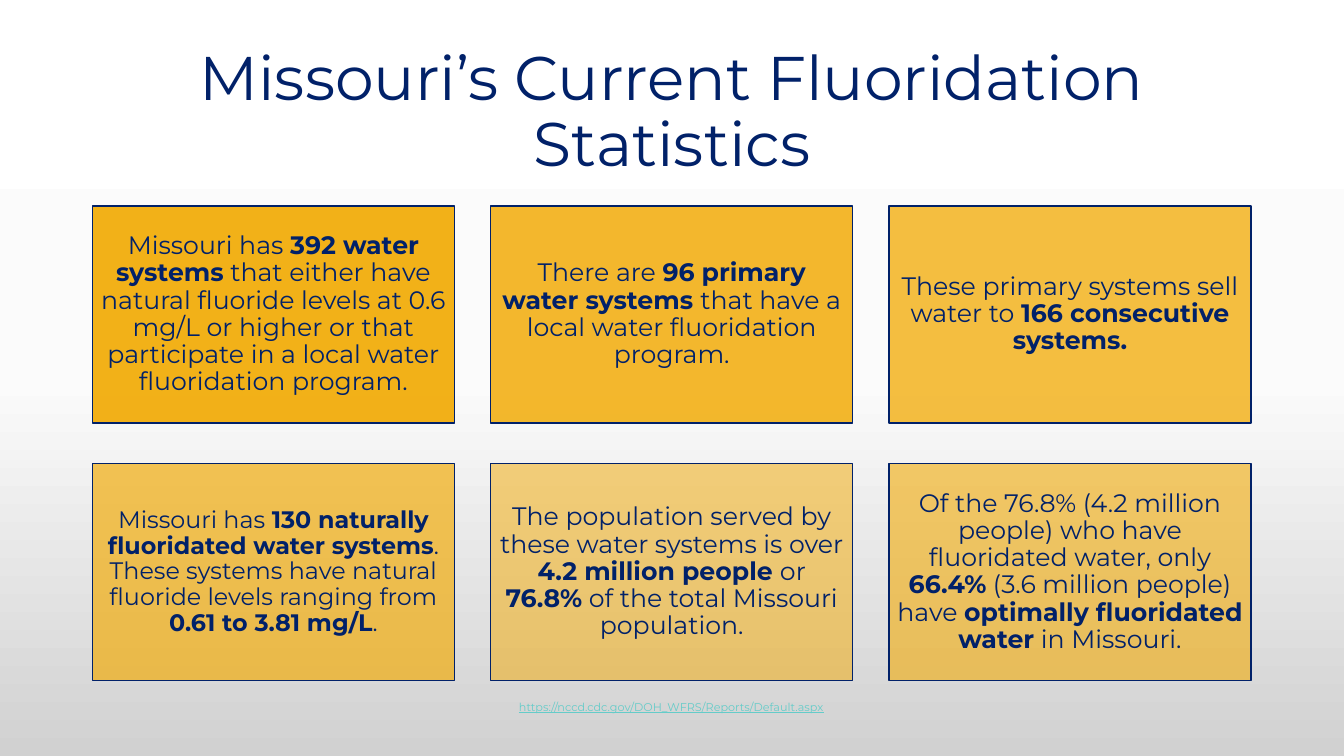
from dataclasses import dataclass

from lxml.etree import SubElement
from pptx import Presentation
from pptx.dml.color import RGBColor as Color
from pptx.enum.shapes import MSO_SHAPE as Preset
from pptx.enum.text import MSO_ANCHOR as Anchor, PP_ALIGN as Align
from pptx.oxml import parse_xml
from pptx.oxml.ns import nsdecls, qn
from pptx.util import Pt


@dataclass(frozen=True)
class Theme:
    """Colours, font and type sizes of the slide."""

    font: str = "Montserrat"
    navy: str = "012169"
    gold: str = "F2A900"
    teal: str = "64CCC9"
    backdrop: tuple = ((0, "FFFFFF"), (50, "FBFBFB"), (100, "D1D1D1"))
    title_size: int = 44
    card_size: int = 18
    small_card_size: int = 17
    link_size: int = 8
    line_spacing: float = 0.9


class SlideBuilder:
    """Draws themed elements on one slide."""

    def __init__(self, page, theme):
        self.page = page
        self.theme = theme

    def background(self):
        """Fill the page with the vertical gradient."""
        stops = "".join(
            f'<a:gs pos="{place * 1000}"><a:srgbClr val="{colour}"/></a:gs>'
            for place, colour in self.theme.backdrop
        )
        gradient = parse_xml(
            f'<a:gradFill {nsdecls("a")} rotWithShape="1"><a:gsLst>{stops}</a:gsLst>'
            '<a:lin ang="5400000" scaled="0"/></a:gradFill>'
        )
        fill = self.page.background.fill
        fill.solid()
        properties = self.page.element.find(".//" + qn("p:bgPr"))
        properties.replace(properties.find(qn("a:solidFill")), gradient)

    def style(self, span, size, colour, bold=False):
        """Apply the theme font to a run."""
        span.font.name = self.theme.font
        span.font.size = Pt(size)
        span.font.bold = bold
        span.font.color.rgb = Color.from_string(colour)

    def text_box(self, left, top, width, height, text):
        """Add a text box and return its frame."""
        box = self.page.shapes.add_textbox(Pt(left), Pt(top), Pt(width), Pt(height))
        box.text_frame.text = text
        return box.text_frame

    def title(self, left, top, width, height, text):
        """Add the centred heading."""
        frame = self.text_box(left, top, width, height, text)
        frame.word_wrap = True
        frame.vertical_anchor = Anchor.MIDDLE
        para = frame.paragraphs[0]
        para.alignment = Align.CENTER
        para.line_spacing = self.theme.line_spacing
        para.space_after = Pt(6)
        self.style(para.runs[0], self.theme.title_size, self.theme.navy)

    def card(self, left, top, width, height, text, opacity, size):
        """Add a gold card whose **marked** words are bold."""
        box = self.page.shapes.add_shape(
            Preset.RECTANGLE, Pt(left), Pt(top), Pt(width), Pt(height)
        )
        box.shadow.inherit = False
        box.fill.solid()
        box.fill.fore_color.rgb = Color.from_string(self.theme.gold)
        tint = box.element.spPr.find(qn("a:solidFill")).find(qn("a:srgbClr"))
        SubElement(tint, qn("a:alpha")).set("val", str(opacity * 1000))
        box.line.color.rgb = Color.from_string(self.theme.navy)
        box.line.width = Pt(1)
        frame = box.text_frame
        frame.word_wrap = True
        frame.vertical_anchor = Anchor.MIDDLE
        frame.margin_left = frame.margin_right = Pt(5)
        frame.margin_top = frame.margin_bottom = Pt(5)
        para = frame.paragraphs[0]
        para.alignment = Align.CENTER
        para.line_spacing = self.theme.line_spacing
        for index, words in enumerate(text.split("**")):
            if words:
                span = para.add_run()
                span.text = words
                self.style(span, size, self.theme.navy, bold=index % 2 == 1)

    def source_link(self, left, top, width, height, text):
        """Add the underlined source address."""
        frame = self.text_box(left, top, width, height, text)
        span = frame.paragraphs[0].runs[0]
        self.style(span, self.theme.link_size, self.theme.teal)
        span.font.underline = True


def main():
    """Build the slide and save it."""
    theme = Theme()
    deck = Presentation()
    deck.slide_width, deck.slide_height = Pt(960), Pt(540)
    page = deck.slides.add_slide(deck.slide_layouts[6])
    builder = SlideBuilder(page, theme)
    builder.background()
    builder.title(66, 29, 828, 104.4, "Missouri’s Current Fluoridation Statistics")

    normal, small = theme.card_size, theme.small_card_size
    cards = [
        ("Missouri has **392 water systems** that either have natural fluoride levels "
         "at 0.6 mg/L or higher or that participate in a local water fluoridation "
         "program.", 90, normal),
        ("There are **96 primary water systems **that have a local water fluoridation "
         "program.", 82, normal),
        ("These primary systems sell water to **166 consecutive systems.**", 74, normal),
        ("Missouri has **130 naturally fluoridated water systems**. These systems have "
         "natural fluoride levels ranging from **0.61 to 3.81 mg/L**.", 66, small),
        ("The population served by these water systems is over **4.2 million people "
         "**or **76.8%** of the total Missouri population.", 50, normal),
        ("Of the 76.8% (4.2 million people) who have fluoridated water, only **66.4%** "
         "(3.6 million people) have **optimally fluoridated water** in Missouri.",
         58, normal),
    ]
    columns, card_width, card_height = 3, 258.6, 155.2
    for index, (text, opacity, size) in enumerate(cards):
        row, column = divmod(index, columns)
        left, top = 66 + column * 284.5, 147 + row * 184
        builder.card(left, top, card_width, card_height, text, opacity, size)

    builder.source_link(
        363.6, 496.8, 233.3, 17.3, "https://nccd.cdc.gov/DOH_WFRS/Reports/Default.aspx"
    )
    deck.save("out.pptx")


if __name__ == "__main__":
    main()
